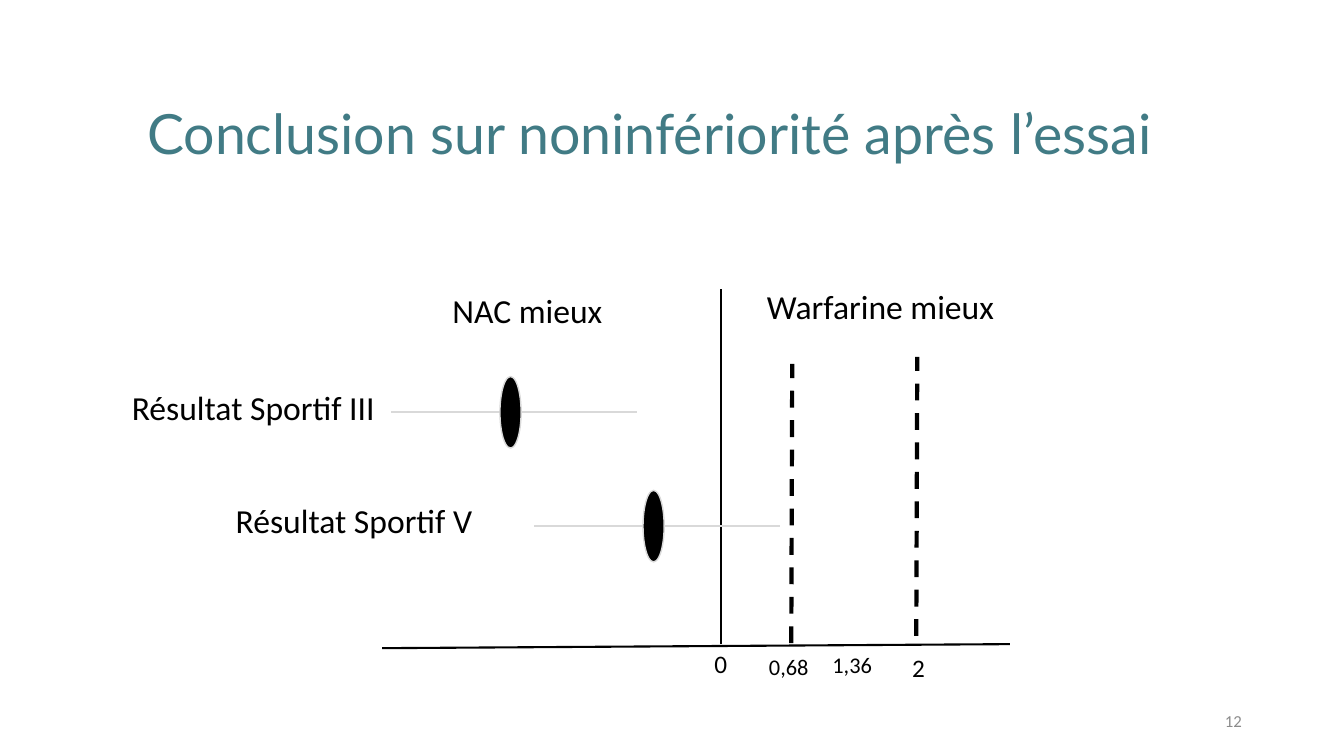
"""Build the slide on the non-inferiority conclusion after the trial."""
import pptx
import pptx.dml.color
import pptx.enum.dml
import pptx.enum.shapes
import pptx.enum.text
import pptx.oxml
import pptx.oxml.ns
import pptx.util
from pptx.util import Pt

RGBColor = pptx.dml.color.RGBColor
ANCHOR = pptx.enum.text.MSO_ANCHOR
ALIGN = pptx.enum.text.PP_ALIGN

TEAL = RGBColor(0x41, 0x7B, 0x85)
BLACK = RGBColor(0, 0, 0)
PALE = RGBColor(0xD9, 0xD9, 0xD9)
GREY = RGBColor(0x8C, 0x8C, 0x8C)

TITLE = "Conclusion sur noninfériorité après l’essai"
PAGE_NUMBER = "12"

# text, left, top, width, height, size, wrap
LABELS = [
    ("Warfarine mieux", 540.7, 200.9, 178.6, 36, 24, False),
    ("NAC mieux", 316.1, 203.8, 122.4, 36, 24, False),
    ("Résultat Sportif III", 87.1, 272.9, 195.1, 36, 24, False),
    ("Résultat Sportif V", 161.3, 353.5, 190.8, 36, 24, False),
    ("0", 503.3, 459.4, 23.8, 28.8, 18, False),
    ("0,68", 542.2, 463, 45.4, 26.6, 16, True),
    ("1,36", 587.5, 461.5, 44.6, 26.6, 16, True),
    ("2", 644.4, 462.2, 22.3, 28.8, 18, True),
]
AXES = [(272.9, 463, 721.4, 460.1), (514.8, 460.1, 514.8, 206.6)]
MARGINS = [(565.2, 459.4), (654.5, 454.3)]
MARGIN_HEIGHT, MARGIN_LEAN = 199.4, 0.7
RESULTS = [(279.4, 294.5), (381.6, 375.8)]
INTERVAL_WIDTH = 175.7
ESTIMATE_OFFSET, ESTIMATE_WIDTH, ESTIMATE_HEIGHT = 77.7, 15.1, 51.1


def add_words(frame, words, size, font, color):
    run = frame.paragraphs[0].add_run()
    run.text = words
    run.font.size = Pt(size)
    run.font.name = font
    run.font.color.rgb = color


def add_label(shapes, words, left, top, width, height, size, wrap, color=BLACK):
    label = shapes.add_textbox(Pt(left), Pt(top), Pt(width), Pt(height))
    label.text_frame.word_wrap = wrap
    add_words(label.text_frame, words, size, "Calibri", color)
    return label.text_frame


def add_line(shapes, x1, y1, x2, y2, color=BLACK, weight=1.5):
    line = shapes.add_connector(
        pptx.enum.shapes.MSO_CONNECTOR.STRAIGHT, Pt(x1), Pt(y1), Pt(x2), Pt(y2))
    line.line.color.rgb = color
    line.line.width = Pt(weight)
    properties = line._element.spPr
    properties.append(pptx.oxml.parse_xml(
        f"<a:effectLst {pptx.oxml.ns.nsdecls('a')}/>"))
    return line


def add_result(shapes, start, level):
    result = shapes.add_group_shape().shapes
    add_line(result, start, level, start + INTERVAL_WIDTH, level, PALE)
    estimate = result.add_shape(
        pptx.enum.shapes.MSO_SHAPE.FLOWCHART_CONNECTOR,
        Pt(start + ESTIMATE_OFFSET), Pt(level - ESTIMATE_HEIGHT / 2),
        Pt(ESTIMATE_WIDTH), Pt(ESTIMATE_HEIGHT))
    estimate.shadow.inherit = False
    estimate.fill.solid()
    estimate.fill.fore_color.rgb = BLACK
    estimate.line.color.rgb = PALE
    estimate.line.width = Pt(1)


def main():
    deck = pptx.Presentation()
    deck.slide_width, deck.slide_height = Pt(960), Pt(540)
    slide = deck.slides.add_slide(deck.slide_layouts[5])
    shapes = slide.shapes

    title = shapes.title
    title.left, title.top = Pt(97.9), Pt(56.2)
    title.width, title.height = Pt(795.6), Pt(82.8)
    title.text_frame.vertical_anchor = ANCHOR.MIDDLE
    title.text_frame.paragraphs[0].alignment = ALIGN.LEFT
    title.text_frame.paragraphs[0].line_spacing = 0.9
    add_words(title.text_frame, TITLE, 39.6, "Lato", TEAL)

    for ends in AXES:
        add_line(shapes, *ends)
    for start, level in RESULTS:
        add_result(shapes, start, level)
    for x, foot in MARGINS:
        margin = add_line(shapes, x, foot, x + MARGIN_LEAN, foot - MARGIN_HEIGHT, weight=3)
        margin.line.dash_style = pptx.enum.dml.MSO_LINE.DASH
    for label in LABELS:
        add_label(shapes, *label)

    page = add_label(shapes, PAGE_NUMBER, 678.2, 500.4, 216, 28.8, 12, True, GREY)
    page.vertical_anchor = ANCHOR.MIDDLE
    page.paragraphs[0].alignment = ALIGN.RIGHT

    deck.save("out.pptx")


if __name__ == "__main__":
    main()
